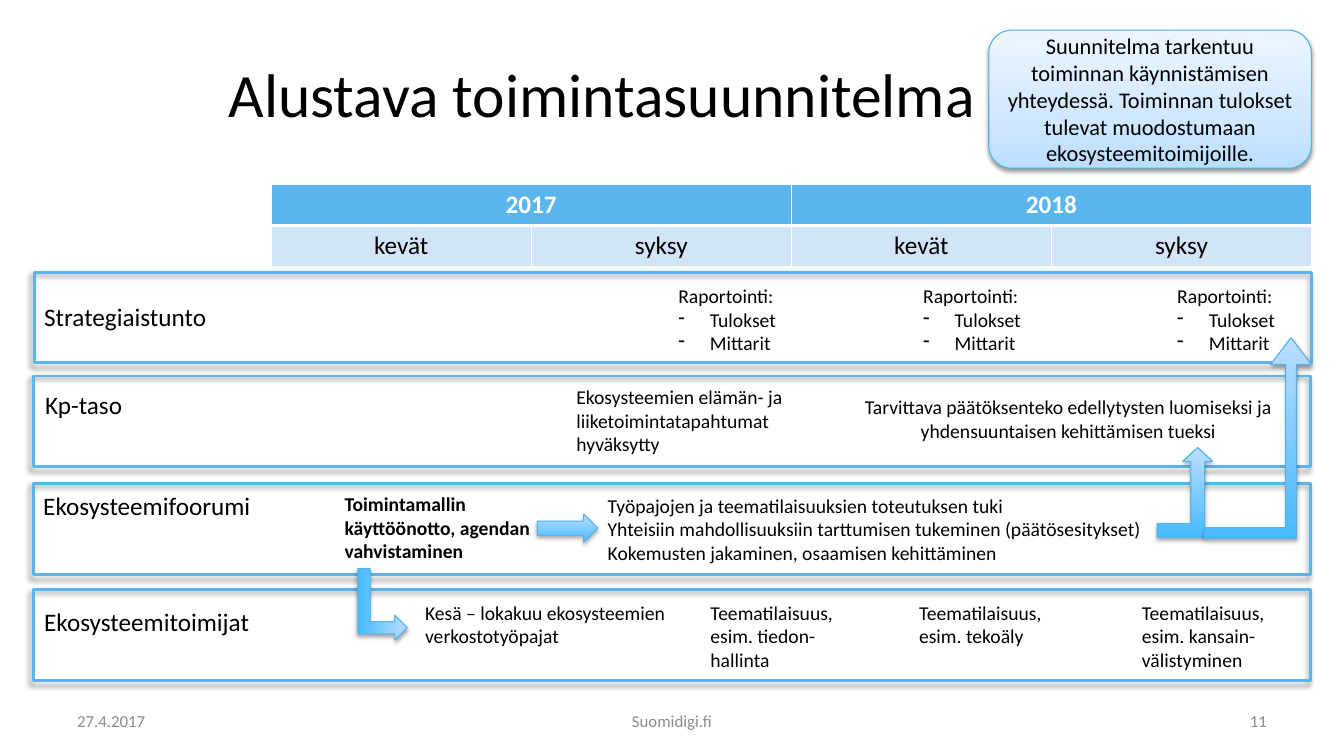
from lxml.etree import SubElement
from pptx import Presentation
from pptx.dml.color import RGBColor
from pptx.enum.shapes import MSO_SHAPE
from pptx.enum.text import MSO_ANCHOR, PP_ALIGN
from pptx.oxml import parse_xml
from pptx.oxml.ns import nsdecls, qn
from pptx.util import Pt

BLUE, BLACK, WHITE, GREY = "5AB5EC", "000000", "FFFFFF", "8C8C8C"
LEFT, MID, RIGHT = PP_ALIGN.LEFT, PP_ALIGN.CENTER, PP_ALIGN.RIGHT

prs = Presentation()
prs.slide_width, prs.slide_height = Pt(960), Pt(540)
slide = prs.slides.add_slide(prs.slide_layouts[5])
shapes = slide.shapes


def write(frame, text, size, align=LEFT, color=BLACK, bold=False):
    """Fill a frame line by line; lines that start with "- " are bullets."""
    for i, line in enumerate(text.split("\n")):
        para = frame.paragraphs[0] if i == 0 else frame.add_paragraph()
        para.text = line.removeprefix("- ")
        para.alignment = align
        if line.startswith("- "):
            props = para._p.get_or_add_pPr()
            props.set("marL", str(Pt(22.5)))
            props.set("indent", str(-Pt(22.5)))
            SubElement(props, qn("a:buChar"), char="-")
        font = para.font
        font.name, font.size, font.bold = "Calibri", Pt(size), bold
        font.color.rgb = RGBColor.from_string(color)


def draw(kind, box, line, width, shade, stops=()):
    """Add a shape with an upward gradient, if any, and a soft shadow."""
    shape = shapes.add_shape(kind, *map(Pt, box))
    shape.fill.background()
    if stops:
        marks = "".join(f'<a:gs pos="{pos * 1000}"><a:srgbClr val="{tone}"/></a:gs>'
                        for pos, tone in stops)
        old = shape._element.spPr.find(qn("a:noFill"))
        old.getparent().replace(old, parse_xml(
            f'<a:gradFill {nsdecls("a")} rotWithShape="1"><a:gsLst>{marks}</a:gsLst>'
            '<a:lin ang="16200000" scaled="0"/></a:gradFill>'))
    shape.line.color.rgb = RGBColor.from_string(line)
    shape.line.width = Pt(width)
    shape.shadow.inherit = False
    alpha, blur, dist, angle = shade
    shape._element.spPr.find(qn("a:effectLst")).append(parse_xml(
        f'<a:outerShdw {nsdecls("a")} blurRad="{Pt(blur)}" dist="{Pt(dist)}" '
        f'dir="{angle * 60000}" rotWithShape="0"><a:srgbClr val="000000">'
        f'<a:alpha val="{alpha * 1000}"/></a:srgbClr></a:outerShdw>'))
    return shape


# Title
title = shapes.title
title.left, title.top, title.width, title.height = map(Pt, (156, 21.6, 756, 90))
title.text_frame.vertical_anchor = MSO_ANCHOR.MIDDLE
write(title.text_frame, "Alustava toimintasuunnitelma", 44)

# Footer
for text, left, width, align in [("27.4.2017", 48, 224, LEFT),
                                 ("Suomidigi.fi", 328, 304, MID),
                                 ("11", 688, 224, RIGHT)]:
    frame = shapes.add_textbox(Pt(left), Pt(500.5), Pt(width), Pt(28.8)).text_frame
    frame.word_wrap = True
    frame.vertical_anchor = MSO_ANCHOR.MIDDLE
    write(frame, text, 12, align, GREY)

# Timeline table
table = shapes.add_table(2, 4, Pt(193.7), Pt(131.8), Pt(743.2), Pt(58.4)).table
for col in table.columns:
    col.width = Pt(185.8)
for row, names in enumerate([("2017", "", "2018", ""),
                             ("kevät", "syksy", "kevät", "syksy")]):
    head = row == 0
    for col, name in enumerate(names):
        cell = table.cell(row, col)
        props = cell._tc.get_or_add_tcPr()
        for side, width in zip("LRTB", (1, 1, 1 if head else 3, 3 if head else 1)):
            props.append(parse_xml(
                f'<a:ln{side} {nsdecls("a")} w="{Pt(width)}"><a:solidFill>'
                f'<a:srgbClr val="{WHITE}"/></a:solidFill></a:ln{side}>'))
        cell.fill.solid()
        cell.fill.fore_color.rgb = RGBColor.from_string(BLUE if head else "D2E5F8")
        if name:
            write(cell.text_frame, name, 18, MID, WHITE if head else BLACK, head)
for col in (0, 2):
    table.cell(0, col).merge(table.cell(0, col + 1))

# Bands with their labels
for label, left, top, inset, drop in [("Strategiaistunto", 24.5, 194.4, 0, 17.3),
                                      ("Kp-taso", 23.8, 268.6, 1.4, 5.7),
                                      ("Ekosysteemifoorumi", 23.8, 345.6, 0, 1.4),
                                      ("Ekosysteemitoimijat", 23.8, 421.2, 0.7, 8.6)]:
    draw(MSO_SHAPE.RECTANGLE, (left, top, 912.2, 64.8), BLUE, 2, (40, 4, 3, 135))
    frame = shapes.add_textbox(Pt(left + inset), Pt(top + drop), Pt(164), Pt(29)).text_frame
    frame.word_wrap = False
    write(frame, label, 18)

# Notes in the bands
report = "Raportointi:\n- Tulokset\n- Mittarit"
notes = [
    (report, 477.4, 199.4, 209),
    (report, 652.3, 199.4, 209),
    (report, 833.8, 199.4, 97.2),
    ("Ekosysteemien elämän- ja liiketoimintatapahtumat hyväksytty", 404.6, 271.4, 162.7),
    ("Tarvittava päätöksenteko edellytysten luomiseksi ja "
     "yhdensuuntaisen kehittämisen tueksi", 602.6, 278.6, 321.1, MID),
    ("Toimintamallin käyttöönotto, agendan vahvistaminen",
     239, 347.8, 152.6, LEFT, BLACK, True),
    ("Työpajojen ja teematilaisuuksien toteutuksen tuki\n"
     "Yhteisiin mahdollisuuksiin tarttumisen tukeminen (päätösesitykset)\n"
     "Kokemusten jakaminen, osaamisen kehittäminen", 427, 349.2, 484.6),
    ("Kesä – lokakuu ekosysteemien verkostotyöpajat", 296.6, 425.5, 201.6),
    ("Teematilaisuus, esim. tiedon- hallinta", 500.4, 425.5, 115.2),
    ("Teematilaisuus, esim. tekoäly", 649.4, 425.5, 115.2),
    ("Teematilaisuus, esim. kansain-välistyminen", 808.6, 425.5, 115.2),
]
for text, left, top, width, *style in notes:
    frame = shapes.add_textbox(Pt(left), Pt(top), Pt(width), Pt(58.2)).text_frame
    frame.word_wrap = True
    write(frame, text, 14, *style)

# Arrows
bent = MSO_SHAPE.BENT_UP_ARROW
for kind, box, turn, bends in [
        (bent, (247.7, 414, 51.1, 35.3), 90, ()),
        (bent, (826.6, 319.7, 39.6, 64.1), 0, (0.25, 0.27, 0.25)),
        (MSO_SHAPE.RIGHT_ARROW, (383.8, 367.2, 43.2, 20.2), 0, ()),
        (bent, (860.4, 241.2, 76.3, 143.3), 0, (0.1, 0.19, 0.25))]:
    arrow = draw(kind, box, "54B2EA", 0.75, (35, 3.1, 1.8, 90),
                 [(0, "47BAFF"), (100, "BBDEFF")])
    arrow.rotation = turn
    for i, bend in enumerate(bends):
        arrow.adjustments[i] = bend

# Callout
callout = draw(MSO_SHAPE.ROUNDED_RECTANGLE, (706.3, 21.6, 230.4, 98.6), "54B2EA", 0.75,
               (38, 3.1, 1.6, 90), [(0, "BBDEFF"), (35, "CFE7FF"), (100, "EDF6FF")])
callout.text_frame.word_wrap = True
write(callout.text_frame, "Suunnitelma tarkentuu toiminnan käynnistämisen yhteydessä. "
      "Toiminnan tulokset tulevat muodostumaan ekosysteemitoimijoille.", 16, MID)

prs.save("out.pptx")
